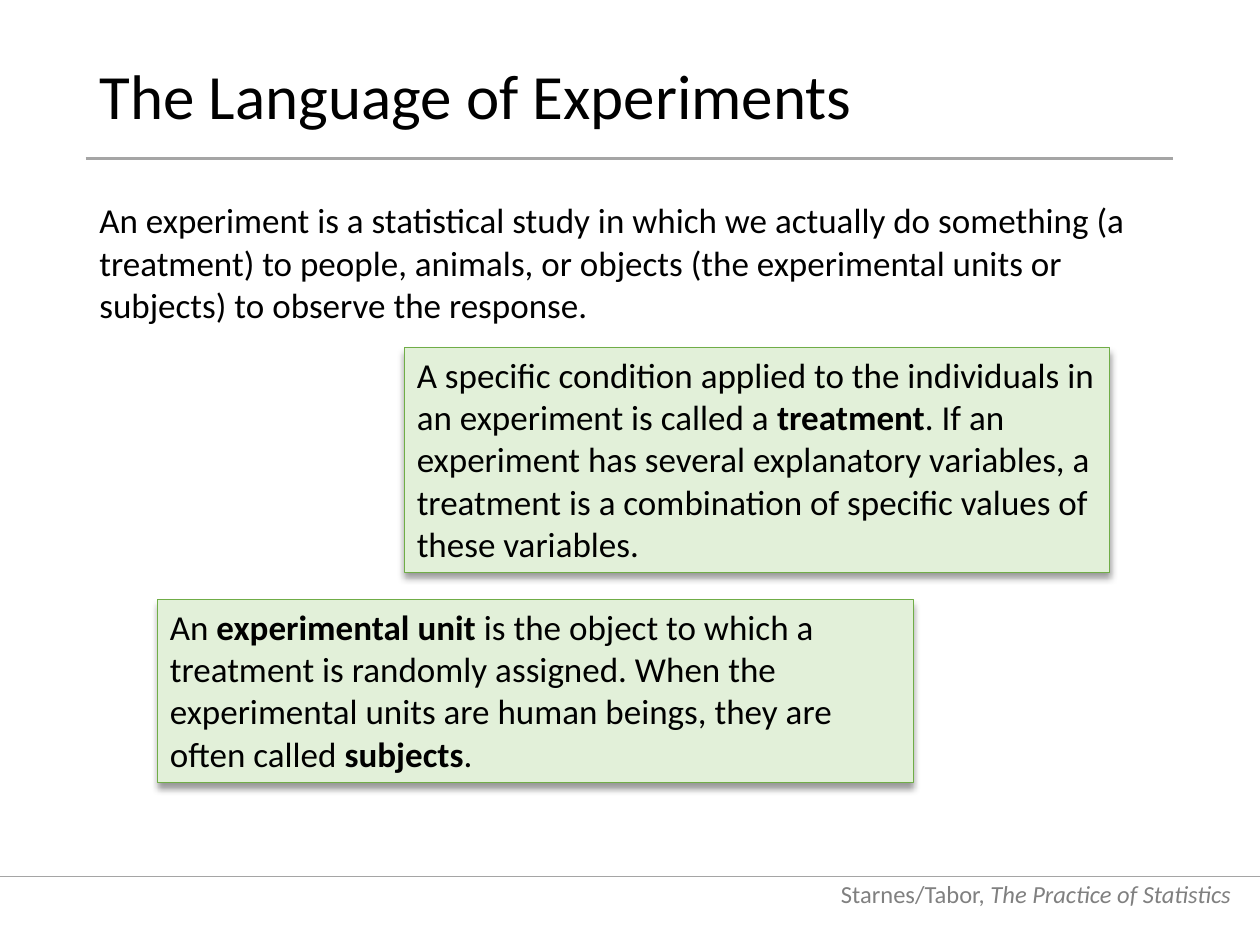
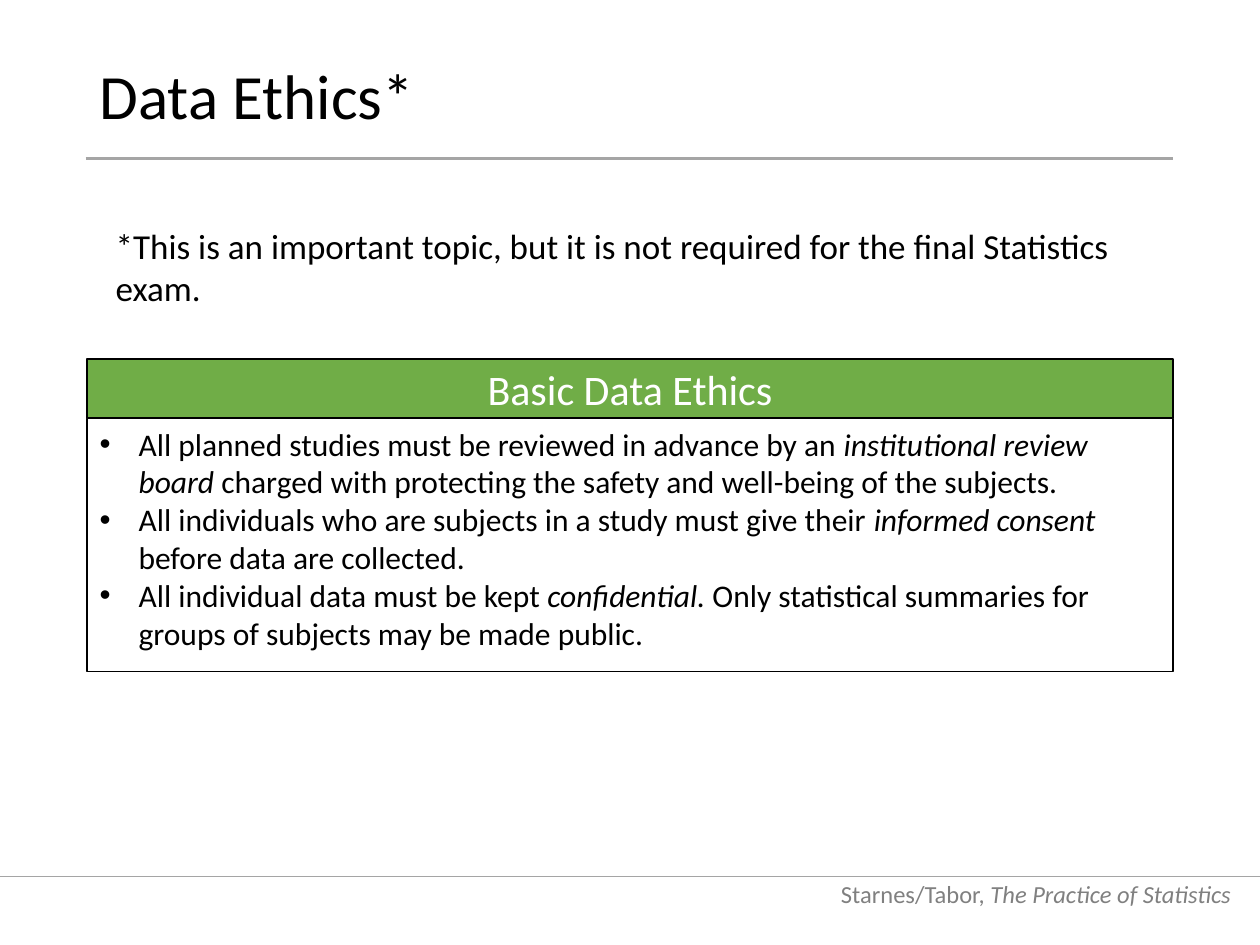
"""Build two statistics slides: the language of experiments and data ethics."""
from lxml.etree import SubElement
from pptx import Presentation
from pptx.dml.color import RGBColor
from pptx.enum.shapes import MSO_CONNECTOR as Connector, MSO_SHAPE as Shape
from pptx.enum.text import MSO_ANCHOR as Anchor, MSO_AUTO_SIZE as AutoSize, PP_ALIGN as Align
from pptx.oxml.ns import qn
from pptx.util import Inches, Pt

BLACK = RGBColor(0x00, 0x00, 0x00)
WHITE = RGBColor(0xFF, 0xFF, 0xFF)
GREY = RGBColor(0x80, 0x80, 0x80)
RULE = RGBColor(0xA5, 0xA5, 0xA5)
GREEN = RGBColor(0x70, 0xAD, 0x47)
PALE_GREEN = RGBColor(0xE2, 0xF0, 0xD9)
FONT = "Calibri"

deck = Presentation()
deck.slide_width, deck.slide_height = Inches(10), Inches(7.5)
COLUMN = deck.slide_width / 100
ROW = deck.slide_height / 75
MARGIN, CONTENT = 6.9, 86.2


def cell(left, top, width, height):
    """Turn grid columns and rows into a position and size."""
    return round(left * COLUMN), round(top * ROW), round(width * COLUMN), round(height * ROW)


def write(box, paragraphs, size, color=BLACK, align=Align.LEFT, anchor=Anchor.TOP):
    """Fill a box with paragraphs of (text, style) runs."""
    frame = box.text_frame
    frame.word_wrap = True
    frame.auto_size = AutoSize.NONE
    frame.vertical_anchor = anchor
    for number, runs in enumerate(paragraphs):
        para = frame.add_paragraph() if number else frame.paragraphs[0]
        para.alignment = align
        para.space_before = Pt(0)
        for text, style in runs:
            span = para.add_run()
            span.text = text
            span.font.name, span.font.size = FONT, Pt(size)
            span.font.bold, span.font.italic = style == "bold", style == "italic"
            span.font.color.rgb = color


pages = []
for title, layout in (("The Language of Experiments", 5), ("Data Ethics*", 1)):
    page = deck.slides.add_slide(deck.slide_layouts[layout])
    pages.append(page)
    footer = page.shapes.add_textbox(*cell(64.7, 68.6, 34, 4))
    write(footer, [[("Starnes/Tabor,", ""), (" The Practice of Statistics", "italic")]],
          14, GREY, Align.RIGHT, Anchor.BOTTOM)
    for start, end, row, weight in ((0, 100, 69.6, 0.5), (6.8, 93.1, 12.6, 1.5)):
        left, top, right, bottom = cell(start, row, end, row)
        rule = page.shapes.add_connector(Connector.STRAIGHT, left, top, right, bottom)
        rule.line.color.rgb, rule.line.width = RULE, Pt(weight)
        SubElement(rule._element.spPr, qn("a:effectLst"))
    heading = page.shapes.title
    heading.left, heading.top, heading.width, heading.height = cell(MARGIN, 4, CONTENT, 7.8)
    write(heading, [[(title, "")]], 36, anchor=Anchor.MIDDLE)
    heading.text_frame.paragraphs[0].line_spacing = 0.9

language, ethics = pages

intro = language.shapes.add_textbox(*cell(MARGIN, 15.3, CONTENT, 11.1))
write(intro, [[("An experiment is a statistical study in which we actually do something (a treatment) "
                "to people, animals, or objects (the experimental units or subjects) to observe "
                "the response.", "")]], 20)

definitions = (
    ((32.1, 27.6, 56, 17.8), [
        ("A specific condition applied to the individuals in an experiment is called a ", ""),
        ("treatment", "bold"),
        (". If an experiment has several explanatory variables, a treatment is a combination "
         "of specific values of these variables.", "")]),
    ((12.5, 47.6, 60, 14.5), [
        ("An ", ""), ("experimental unit", "bold"),
        (" is the object to which a treatment is randomly assigned. When the experimental units "
         "are human beings, they are often called ", ""),
        ("subjects", "bold"), (".", "")]),
)
for place, runs in definitions:
    card = language.shapes.add_shape(Shape.RECTANGLE, *cell(*place))
    card.fill.solid()
    card.fill.fore_color.rgb = PALE_GREEN
    card.line.color.rgb, card.line.width = GREEN, Pt(0.5)
    card.shadow.inherit = False
    effects = card._element.spPr.find(qn("a:effectLst"))
    shadow = SubElement(effects, qn("a:outerShdw"), blurRad=str(Pt(4)), dist=str(Pt(3)),
                        dir="5400000", rotWithShape="0")
    shade = SubElement(shadow, qn("a:srgbClr"), val=str(BLACK))
    SubElement(shade, qn("a:alpha"), val="40000")
    write(card, [runs], 20)

note = ethics.shapes.add_textbox(*cell(8.2, 17.3, 83.6, 7.7))
write(note, [[("*This is an important topic, but it is not required for the final Statistics exam.",
               "")]], 20)

banner = ethics.shapes.add_shape(Shape.RECTANGLE, *cell(MARGIN, 28.5, CONTENT, 4.7))
banner.fill.solid()
banner.fill.fore_color.rgb = GREEN
banner.line.color.rgb, banner.line.width = BLACK, Pt(1)
banner.shadow.inherit = False
write(banner, [[("Basic Data Ethics", "")]], 24, WHITE, Align.CENTER, Anchor.MIDDLE)

principles = ethics.placeholders[1]
principles.left, principles.top, principles.width, principles.height = cell(
    MARGIN, 33.2, CONTENT, 20.1)
principles.line.color.rgb, principles.line.width = BLACK, Pt(0.75)
write(principles, [
    [("All planned studies must be reviewed in advance by an ", ""),
     ("institutional review board ", "italic"),
     ("charged with protecting the safety and well-being of the subjects.", "")],
    [("All individuals who are subjects in a study must give their ", ""),
     ("informed consent ", "italic"), ("before data are collected.", "")],
    [("All individual data must be kept ", ""), ("confidential. ", "italic"),
     ("Only statistical summaries for groups of subjects may be made public.", "")],
], 18)
for para in principles.text_frame.paragraphs:
    properties = para._p.get_or_add_pPr()
    properties.set("marL", str(Inches(0.31)))
    properties.set("indent", str(-Inches(0.31)))
    SubElement(properties, qn("a:buFont"), typeface="Arial")
    SubElement(properties, qn("a:buChar"), char="•")

deck.save("out.pptx")
